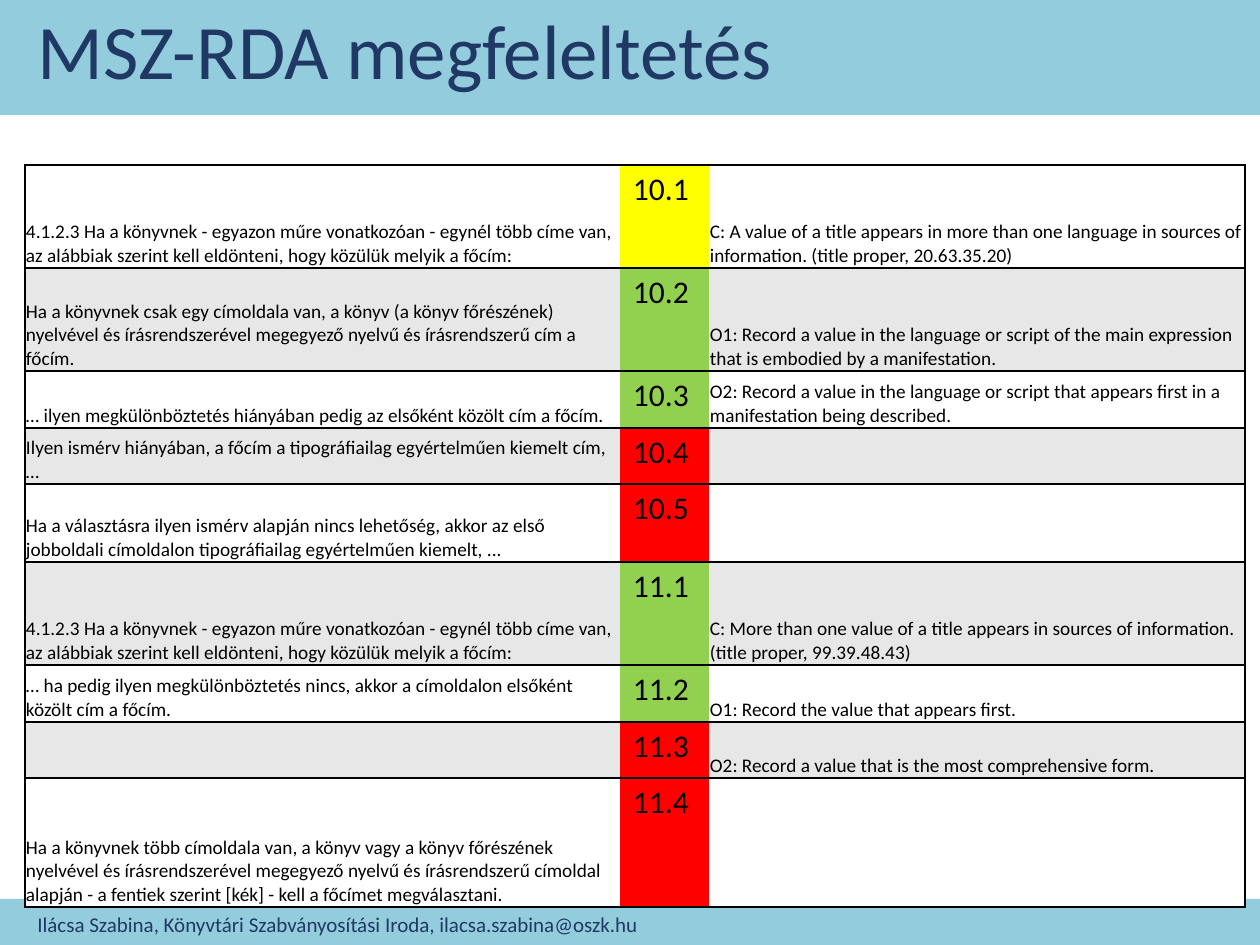
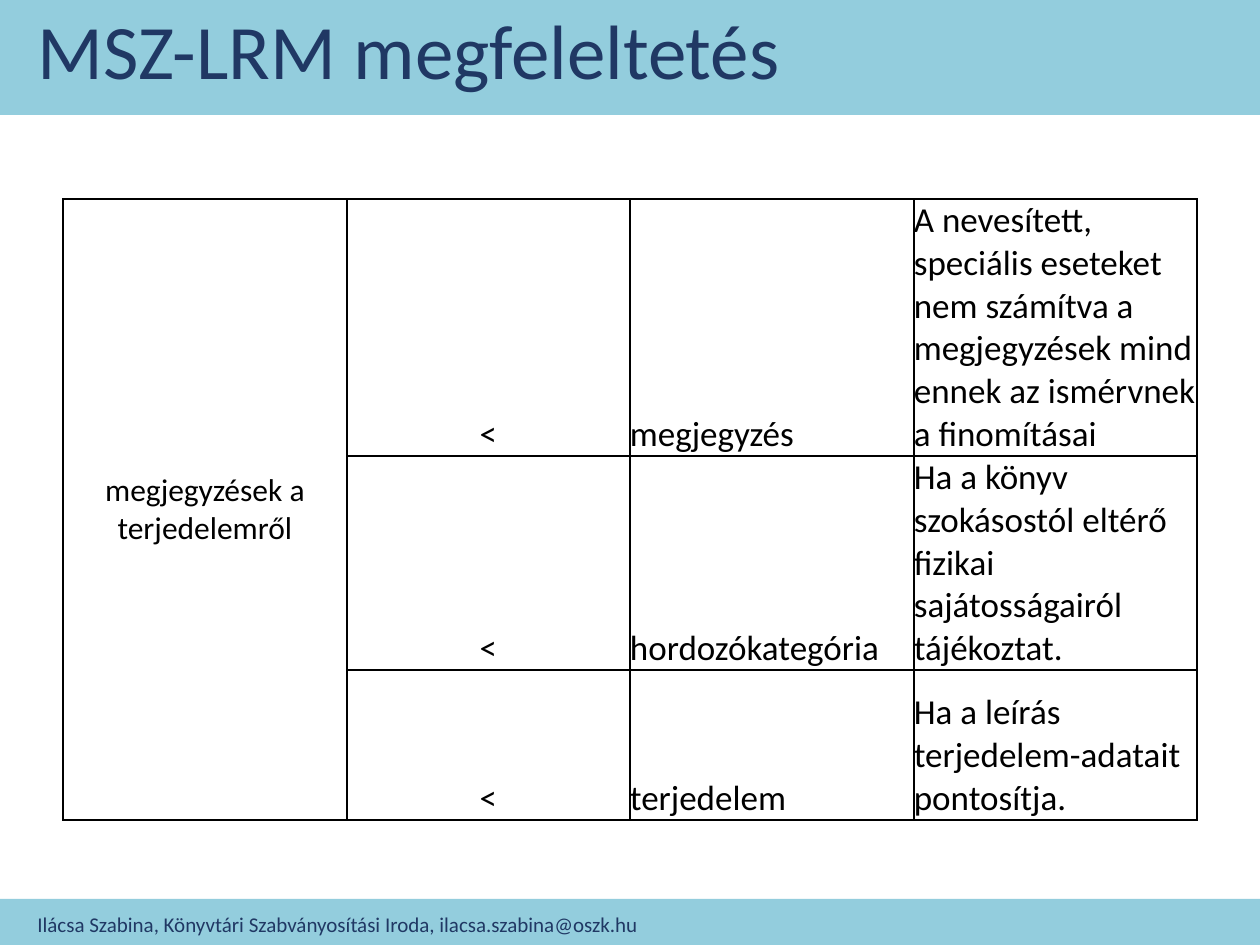
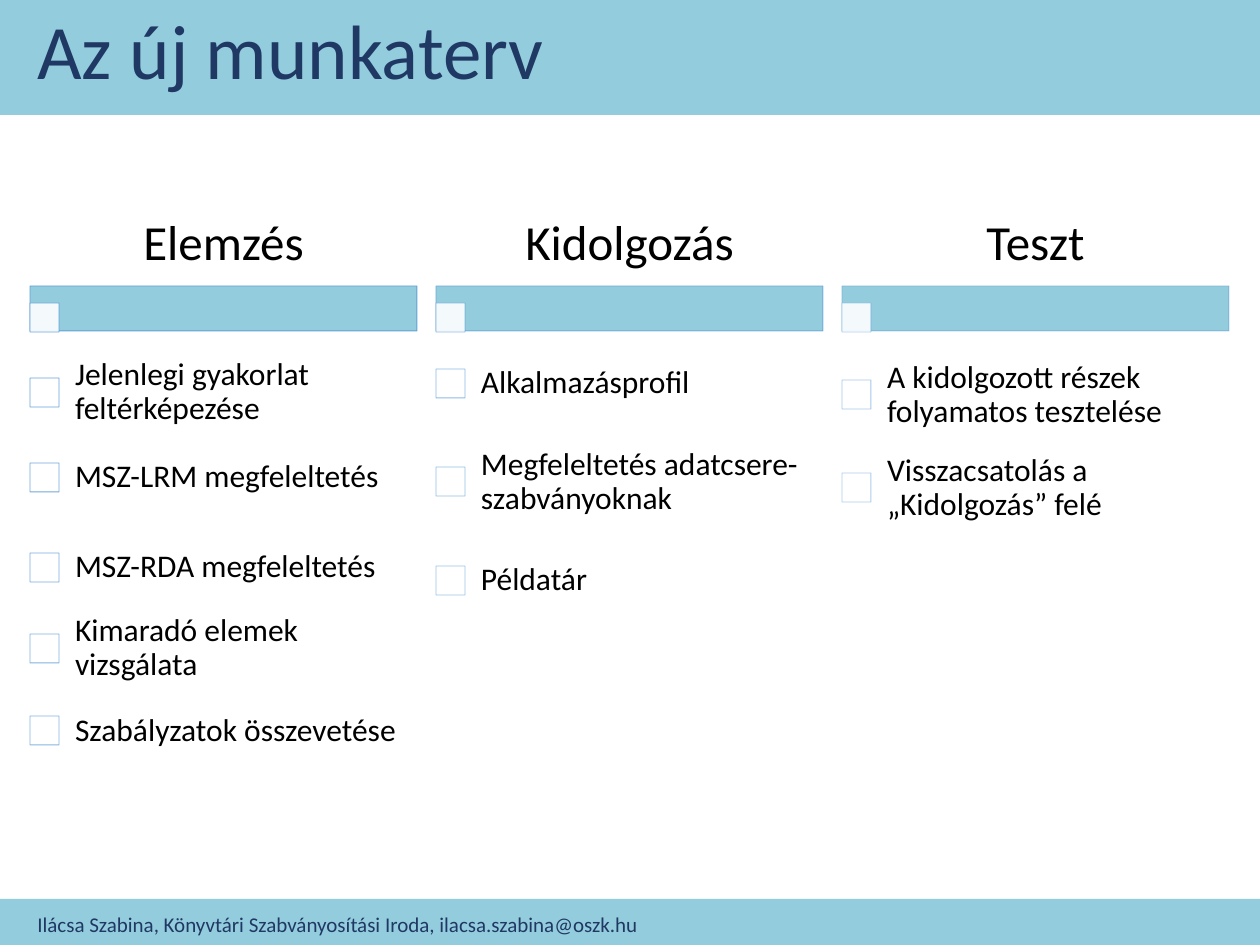
from lxml.etree import SubElement
from pptx import Presentation
from pptx.dml.color import RGBColor
from pptx.enum.shapes import MSO_SHAPE
from pptx.enum.text import MSO_ANCHOR, PP_ALIGN
from pptx.oxml.ns import qn
from pptx.util import Pt

PX = 914400 // 126
FONT = "Calibri"
COLORS = {
    "band": "93CDDD", "title": "203864", "text": "000000", "white": "FFFFFF",
    "grey": "E7E7E7", "yellow": "FFFF00", "green": "92D050", "red": "FF0000",
    "outline": "5B9BD5",
}
FOOTER = "Ilácsa Szabina, Könyvtári Szabványosítási Iroda, ilacsa.szabina@oszk.hu"
LEFT, CENTER = PP_ALIGN.LEFT, PP_ALIGN.CENTER
TOP, MIDDLE, BOTTOM = MSO_ANCHOR.TOP, MSO_ANCHOR.MIDDLE, MSO_ANCHOR.BOTTOM


def write(tf, text, size, color="text", align=LEFT, spacing=None):
    tf.text = text
    p = tf.paragraphs[0]
    p.alignment = align
    p.line_spacing = spacing
    for r in p.runs:
        r.font.size = Pt(size)
        r.font.name = FONT
        r.font.bold = False
        r.font.color.rgb = RGBColor.from_string(COLORS[color])


def add_rect(s, x, y, w, h, color, line_alpha=None, fill_alpha=None):
    sp = s.shapes.add_shape(MSO_SHAPE.RECTANGLE, x * PX, y * PX, w * PX, h * PX)
    sp.shadow.inherit = False
    sp.fill.solid()
    sp.fill.fore_color.rgb = RGBColor.from_string(COLORS[color])
    if line_alpha:
        sp.line.width = Pt(0.5)
        sp.line.color.rgb = RGBColor.from_string(COLORS["outline"])
    else:
        sp.line.fill.background()
    fill_clr, *line_clr = sp._element.spPr.iter(qn("a:srgbClr"))
    for clr, alpha in [(fill_clr, fill_alpha)] + [(c, line_alpha) for c in line_clr]:
        if alpha:
            SubElement(clr, qn("a:alpha"), val=str(alpha * 1000))


prs = Presentation()
prs.slide_width = 1260 * PX
prs.slide_height = 945 * PX

slides = []
for title in ["MSZ-RDA megfeleltetés", "MSZ-LRM megfeleltetés", "Az új munkaterv"]:
    s = prs.slides.add_slide(prs.slide_layouts[6])
    add_rect(s, 0, 0, 1260, 115, "band")
    add_rect(s, 0, 899, 1260, 46, "band")
    for text, size, y, w, h, spacing in [
        (title, 44, 18, 932, 74, 0.9),
        (FOOTER, 12, 907, 984, 34, None),
    ]:
        tf = s.shapes.add_textbox(25 * PX, y * PX, w * PX, h * PX).text_frame
        tf.word_wrap = True
        tf.vertical_anchor = MIDDLE
        write(tf, text, size, "title", spacing=spacing)
    slides.append(s)

MULTIPLE_TITLES = (
    "4.1.2.3 Ha a könyvnek - egyazon műre vonatkozóan - egynél több címe van, "
    "az alábbiak szerint kell eldönteni, hogy közülük melyik a főcím:"
)
rda_rows = [
    (103, "yellow", MULTIPLE_TITLES, "10.1",
     "C: A value of a title appears in more than one language in sources of information. "
     "(title proper, 20.63.35.20)"),
    (103, "green",
     "Ha a könyvnek csak egy címoldala van, a könyv (a könyv főrészének) nyelvével és "
     "írásrendszerével megegyező nyelvű és írásrendszerű cím a főcím.", "10.2",
     "O1: Record a value in the language or script of the main expression that is "
     "embodied by a manifestation."),
    (57, "green",
     "… ilyen megkülönböztetés hiányában pedig az elsőként közölt cím a főcím.", "10.3",
     "O2: Record a value in the language or script that appears first in a "
     "manifestation being described."),
    (56, "red",
     "Ilyen ismérv hiányában, a főcím a tipográfiailag egyértelműen kiemelt cím, …", "10.4", ""),
    (78, "red",
     "Ha a választásra ilyen ismérv alapján nincs lehetőség, akkor az első jobboldali "
     "címoldalon tipográfiailag egyértelműen kiemelt, ...", "10.5", ""),
    (103, "green", MULTIPLE_TITLES, "11.1",
     "C: More than one value of a title appears in sources of information. "
     "(title proper, 99.39.48.43)"),
    (57, "green",
     "… ha pedig ilyen megkülönböztetés nincs, akkor a címoldalon elsőként közölt cím a főcím.",
     "11.2", "O1: Record the value that appears first."),
    (56, "red", "", "11.3", "O2: Record a value that is the most comprehensive form."),
    (129, "red",
     "Ha a könyvnek több címoldala van, a könyv vagy a könyv főrészének nyelvével és "
     "írásrendszerével megegyező nyelvű és írásrendszerű címoldal alapján - a fentiek "
     "szerint [kék] - kell a főcímet megválasztani.", "11.4", ""),
]
lrm_rows = [
    (257, "white", "megjegyzések a terjedelemről", "<", "megjegyzés",
     "A nevesített, speciális eseteket nem számítva a megjegyzések mind ennek az "
     "ismérvnek a finomításai"),
    (214, "white", "", "<", "hordozókategória",
     "Ha a könyv szokásostól eltérő fizikai sajátosságairól tájékoztat."),
    (150, "white", "", "<", "terjedelem", "Ha a leírás terjedelem-adatait pontosítja."),
]
DEFAULT_INSET, THIN_INSET, NO_INSET = (13, 6, 13, 6), (1, 1, 1, 0), (0, 0, 0, 0)
rda_cols = [
    (595, 11, LEFT, BOTTOM, THIN_INSET, "LTB"),
    (89, 18, LEFT, TOP, DEFAULT_INSET, "TB"),
    (536, 11, LEFT, BOTTOM, THIN_INSET, "RTB"),
]
lrm_cols = [
    (284, 18, CENTER, MIDDLE, DEFAULT_INSET, "LRTB"),
    (283, 20, CENTER, BOTTOM, NO_INSET, "LRTB"),
    (284, 20, LEFT, BOTTOM, NO_INSET, "LRTB"),
    (283, 20, LEFT, BOTTOM, NO_INSET, "LRTB"),
]

tables = []
for s, x, y, cols, rows, band_color in [
    (slides[0], 25, 165, rda_cols, rda_rows, "grey"),
    (slides[1], 63, 199, lrm_cols, lrm_rows, "white"),
]:
    w, h = sum(col[0] for col in cols), sum(row[0] for row in rows)
    table = s.shapes.add_table(len(rows), len(cols), x * PX, y * PX, w * PX, h * PX).table
    table.first_row = False
    table.horz_banding = False
    for column, col in zip(table.columns, cols):
        column.width = col[0] * PX
    for i, (height, status, *texts) in enumerate(rows):
        table.rows[i].height = height * PX
        for j, (text, (_, size, align, anchor, inset, sides)) in enumerate(zip(texts, cols)):
            cell = table.cell(i, j)
            write(cell.text_frame, text, size, align=align)
            cell.vertical_anchor = anchor
            (cell.margin_left, cell.margin_top,
             cell.margin_right, cell.margin_bottom) = [m * PX for m in inset]
            tcPr = cell._tc.get_or_add_tcPr()
            for side in "LRTB":
                ln = SubElement(tcPr, qn("a:ln" + side), w=str(Pt(1)))
                if side in sides:
                    fill = SubElement(ln, qn("a:solidFill"))
                    SubElement(fill, qn("a:srgbClr"), val=COLORS["text"])
                else:
                    SubElement(ln, qn("a:noFill"))
            color = status if j == 1 else band_color if i % 2 else "white"
            cell.fill.solid()
            cell.fill.fore_color.rgb = RGBColor.from_string(COLORS[color])
    tables.append(table)
tables[1].cell(0, 0).merge(tables[1].cell(2, 0))

phases = [
    ("Elemzés", 90, [
        ("Jelenlegi gyakorlat feltérképezése", 85),
        ("MSZ-LRM megfeleltetés", 85),
        ("MSZ-RDA megfeleltetés", 95),
        ("Kimaradó elemek vizsgálata", 67),
        ("Szabályzatok összevetése", 98),
    ]),
    ("Kidolgozás", 70, [
        ("Alkalmazásprofil", 67),
        ("Megfeleltetés adatcsere-szabványoknak", 130),
        ("Példatár", 67),
    ]),
    ("Teszt", 50, [
        ("A kidolgozott részek folyamatos tesztelése", 90),
        ("Visszacsatolás a „Kidolgozás” felé", 96),
    ]),
]
BOX = 29
s = slides[2]
n = 0
for i, (phase, alpha, tasks) in enumerate(phases):
    x = 30 + 406 * i
    add_rect(s, x, 286, 387, 45, "band", alpha)
    add_rect(s, x, 303, BOX, BOX, "white", alpha, 90)
    labels = [(phase, 28, CENTER, x, 204, 387, 82, 8, 5)]
    y = 350
    for task, h in tasks:
        add_rect(s, x, y + (h - BOX) // 2, BOX, BOX, "white", round(90 - 40 * n / 9))
        labels.append((task, 18, LEFT, x + 28, y, 360, h, 17, 17))
        y += h
        n += 1
    for text, size, align, left, top, w, h, inset_x, inset_y in labels:
        tf = s.shapes.add_textbox(left * PX, top * PX, w * PX, h * PX).text_frame
        tf.word_wrap = True
        tf.vertical_anchor = MIDDLE
        tf.margin_left = tf.margin_right = inset_x * PX
        tf.margin_top = tf.margin_bottom = inset_y * PX
        write(tf, text, size, align=align, spacing=0.9)

prs.save("out.pptx")
